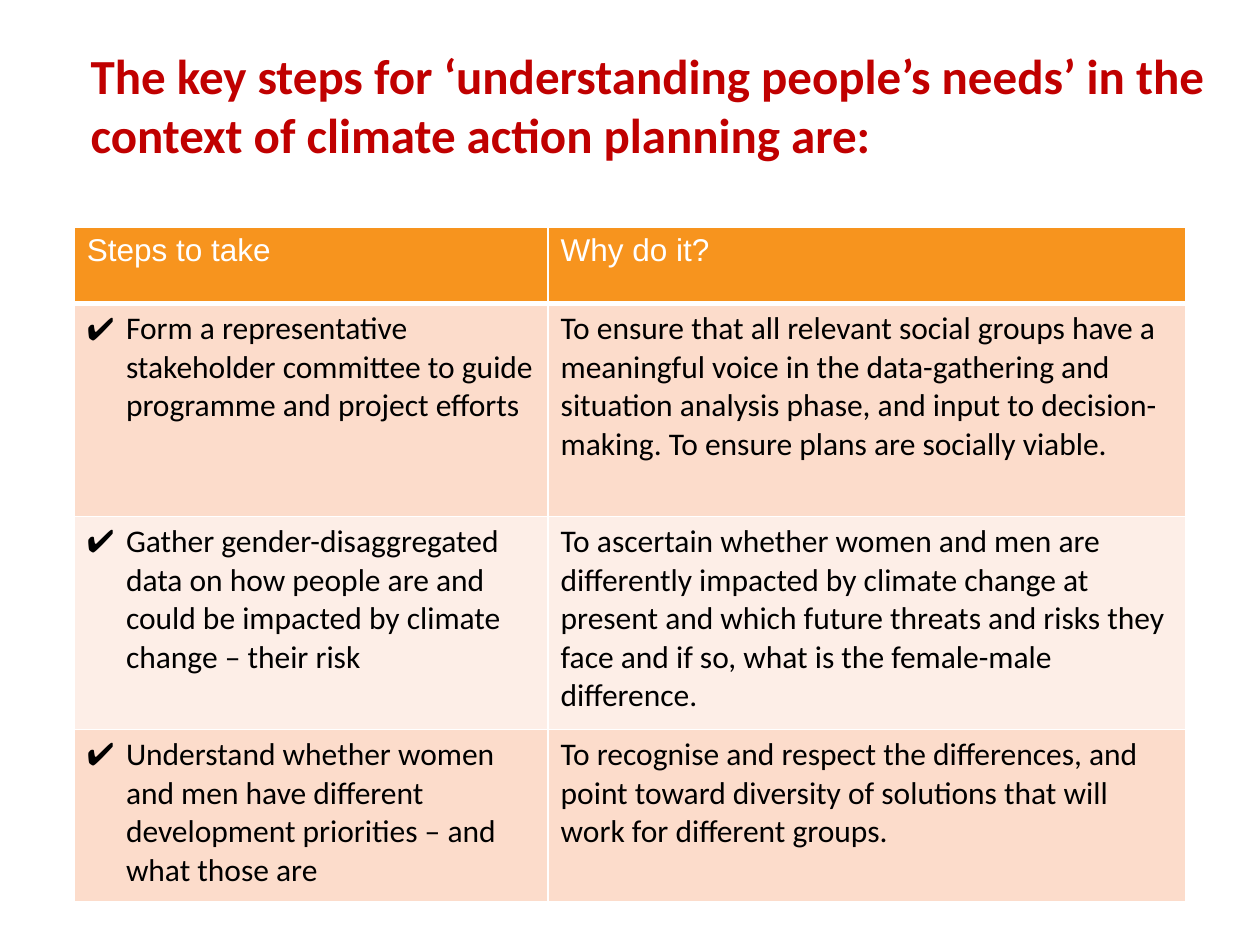
from lxml import etree
from pptx import Presentation
from pptx.dml.color import RGBColor
from pptx.enum.text import MSO_ANCHOR
from pptx.oxml.ns import qn
from pptx.util import Inches, Pt

TOP = MSO_ANCHOR.TOP
COLORS = {
    "title": "C00000",
    "header": "F7941E",
    "band_dark": "FCDCCB",
    "band_light": "FDEEE7",
    "text": "000000",
    "white": "FFFFFF",
}
TITLE = ("The key steps for ‘understanding people’s needs’ in the context "
         "of climate action planning are:")
STEPS = [
    ("Steps to take", "Why do it?"),
    ("Form a representative stakeholder committee to guide programme and project efforts",
     "To ensure that all relevant social groups have a meaningful voice in the "
     "data-gathering and situation analysis phase, and input to decision-making. "
     "To ensure plans are socially viable."),
    ("Gather gender-disaggregated data on how people are and could be impacted by "
     "climate change – their risk",
     "To ascertain whether women and men are differently impacted by climate change "
     "at present and which future threats and risks they face and if so, what is the "
     "female-male difference."),
    ("Understand whether women and men have different development priorities – and "
     "what those are",
     "To recognise and respect the differences, and point toward diversity of "
     "solutions that will work for different groups."),
]
COLUMN_WIDTHS = [3.76, 5.06]
ROW_HEIGHTS = [0.61, 1.69, 1.69, 1.37]


def write_text(frame, text, font_name, size, color, bold=False):
    paragraph = frame.paragraphs[0]
    paragraph.text = text
    font = paragraph.runs[0].font
    font.name, font.size, font.bold = font_name, Pt(size), bold
    font.color.rgb = RGBColor.from_string(COLORS[color])
    return paragraph


def add_title(slide):
    box = slide.shapes.add_textbox(Inches(0.72), Inches(0.36), Inches(9.03), Inches(1.36))
    frame = box.text_frame
    frame.word_wrap = True
    frame.vertical_anchor = TOP
    frame.margin_left = frame.margin_right = frame.margin_top = frame.margin_bottom = 0
    write_text(frame, TITLE, "Calibri", 28, "title", bold=True)


def add_color(parent, color):
    fill = etree.SubElement(parent, qn("a:solidFill"))
    etree.SubElement(fill, qn("a:srgbClr"), val=COLORS[color])


def add_borders(cell, row_index):
    widths = {
        "L": 1,
        "R": 1,
        "T": 3 if row_index == 1 else 1,
        "B": 3 if row_index == 0 else 1,
    }
    properties = cell._tc.get_or_add_tcPr()
    for side, width in widths.items():
        line = etree.SubElement(properties, qn(f"a:ln{side}"), w=str(Pt(width)))
        add_color(line, "white")


def add_check_mark(paragraph):
    properties = paragraph._p.get_or_add_pPr()
    properties.set("marL", str(Inches(0.31)))
    properties.set("indent", str(-Inches(0.31)))
    add_color(etree.SubElement(properties, qn("a:buClr")), "text")
    etree.SubElement(properties, qn("a:buFont"), typeface="Arial")
    etree.SubElement(properties, qn("a:buChar"), char="✔")


def fill_cell(cell, text, row_index, column_index):
    add_borders(cell, row_index)
    is_header = row_index == 0
    band = "header" if is_header else "band_dark" if row_index % 2 else "band_light"
    cell.fill.solid()
    cell.fill.fore_color.rgb = RGBColor.from_string(COLORS[band])
    font_name, color = ("Arial", "white") if is_header else ("Calibri", "text")
    paragraph = write_text(cell.text_frame, text, font_name, 18, color)
    if column_index == 0 and not is_header:
        add_check_mark(paragraph)


def add_steps_table(slide):
    table = slide.shapes.add_table(
        len(STEPS), len(COLUMN_WIDTHS), Inches(0.59), Inches(1.8),
        Inches(sum(COLUMN_WIDTHS)), Inches(sum(ROW_HEIGHTS))).table
    for column, width in zip(table.columns, COLUMN_WIDTHS):
        column.width = Inches(width)
    for row, height in zip(table.rows, ROW_HEIGHTS):
        row.height = Inches(height)
    for row_index, texts in enumerate(STEPS):
        for column_index, text in enumerate(texts):
            fill_cell(table.cell(row_index, column_index), text, row_index, column_index)


def main():
    presentation = Presentation()
    presentation.slide_width, presentation.slide_height = Inches(10), Inches(7.5)
    slide = presentation.slides.add_slide(presentation.slide_layouts[6])
    add_title(slide)
    add_steps_table(slide)
    presentation.save("out.pptx")


if __name__ == "__main__":
    main()
